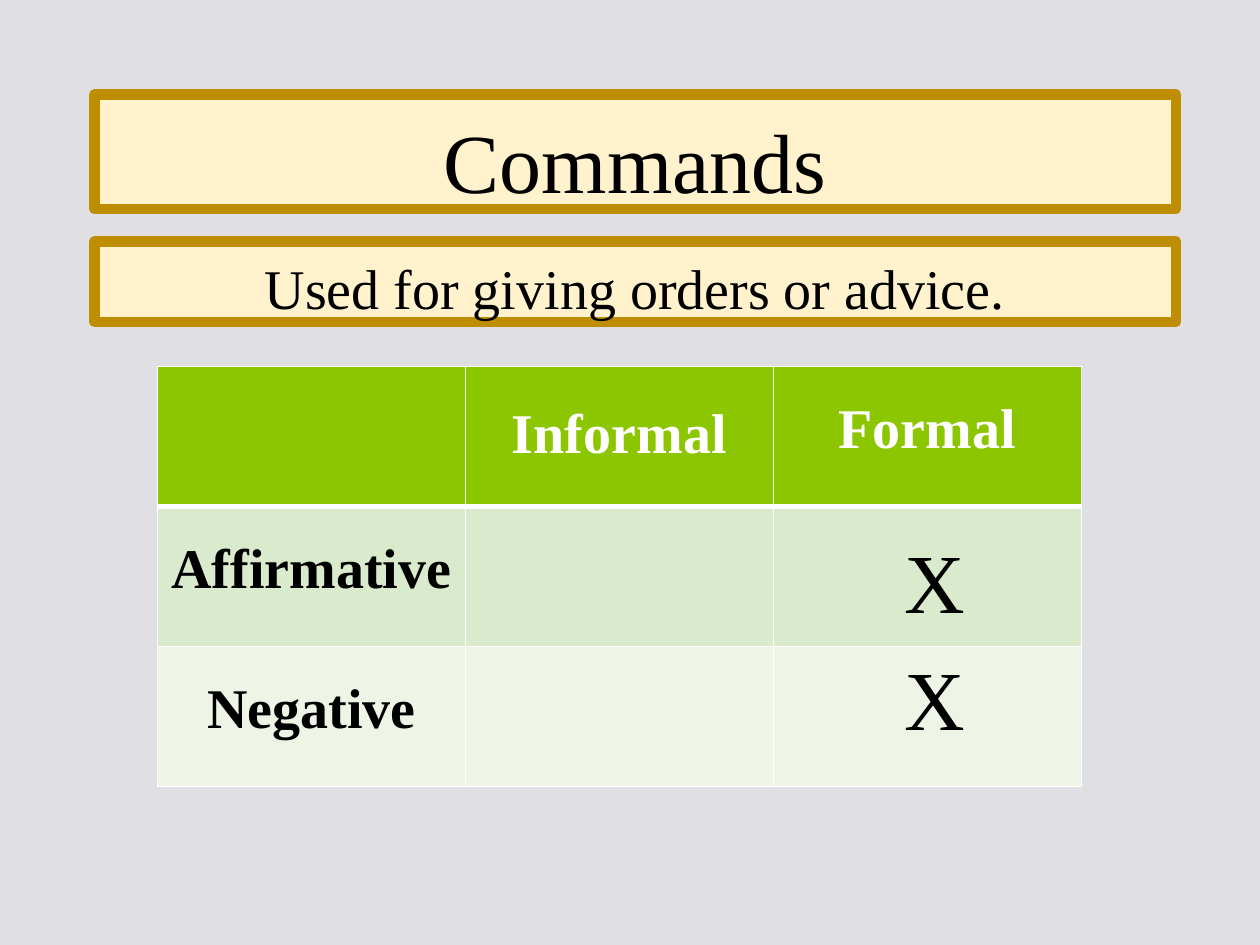
from pptx import Presentation
from pptx.dml.color import RGBColor
from pptx.enum.shapes import MSO_SHAPE
from pptx.enum.text import MSO_ANCHOR, MSO_AUTO_SIZE, PP_ALIGN
from pptx.oxml.ns import qn
from pptx.util import Pt
from lxml.etree import SubElement

COLORS = {
    "background": "DFDFE4",
    "cream": "FFF2CC",
    "gold": "BF8E00",
    "green": "8CC600",
    "light green": "DAEACC",
    "pale green": "EEF5E7",
    "black": "000000",
    "white": "FFFFFF",
}
INSET = 3.6


def color(name):
    return RGBColor.from_string(COLORS[name])


class SlideBuilder:
    font = "Times New Roman"

    def __init__(self, slide):
        self.slide = slide
        fill = slide.background.fill
        fill.solid()
        fill.fore_color.rgb = color("background")

    def set_text(self, frame, text, size, ink="black", bold=False):
        frame.text = text
        paragraph = frame.paragraphs[0]
        paragraph.alignment = PP_ALIGN.CENTER
        font = paragraph.font
        font.name, font.size, font.bold = self.font, Pt(size), bold
        font.color.rgb = color(ink)

    def fill_frame(self, shape, text, size):
        frame = shape.text_frame
        frame.word_wrap = True
        frame.auto_size = MSO_AUTO_SIZE.NONE
        frame.vertical_anchor = MSO_ANCHOR.TOP
        frame.margin_top = Pt(INSET + size / 10)
        frame.margin_bottom = Pt(0)
        self.set_text(frame, text, size)

    def banner(self, shape, text, size):
        shape.fill.solid()
        shape.fill.fore_color.rgb = color("cream")
        shape.line.color.rgb = color("gold")
        shape.line.width = Pt(6)
        self.fill_frame(shape, text, size)

    def title(self, text, left, top, width, height, size):
        shape = self.slide.shapes.title
        shape.left, shape.top = Pt(left), Pt(top)
        shape.width, shape.height = Pt(width), Pt(height)
        self.banner(shape, text, size)

    def box(self, text, left, top, width, height, size):
        shape = self.slide.shapes.add_shape(
            MSO_SHAPE.RECTANGLE, Pt(left), Pt(top), Pt(width), Pt(height))
        shape.shadow.inherit = False
        self.banner(shape, text, size)

    def label(self, text, left, top, width, height, size):
        shape = self.slide.shapes.add_textbox(Pt(left), Pt(top), Pt(width), Pt(height))
        self.fill_frame(shape, text, size)

    def borders(self, cell, top, bottom):
        properties = cell._tc.get_or_add_tcPr()
        for side, width in (("L", 1), ("R", 1), ("T", top), ("B", bottom)):
            line = SubElement(properties, qn(f"a:ln{side}"), w=str(Pt(width)))
            solid = SubElement(line, qn("a:solidFill"))
            SubElement(solid, qn("a:srgbClr"), val=COLORS["white"])

    def table(self, rows, fills, left, top, column_width, row_height):
        columns = len(rows[0])
        table = self.slide.shapes.add_table(
            len(rows), columns, Pt(left), Pt(top),
            Pt(column_width * columns), Pt(row_height * len(rows))).table
        for row_index, (row, fill) in enumerate(zip(rows, fills)):
            header = row_index == 0
            for column_index, (text, margin) in enumerate(row):
                cell = table.cell(row_index, column_index)
                self.borders(cell, 3 if row_index == 1 else 1, 3 if header else 1)
                cell.fill.solid()
                cell.fill.fore_color.rgb = color(fill)
                cell.margin_left = cell.margin_right = Pt(INSET)
                cell.margin_top = Pt(margin)
                if text:
                    self.set_text(cell.text_frame, text, 32,
                                  "white" if header else "black", True)


def main():
    presentation = Presentation()
    presentation.slide_width, presentation.slide_height = Pt(720), Pt(540)
    builder = SlideBuilder(presentation.slides.add_slide(presentation.slide_layouts[5]))
    builder.title("Commands", 54, 54, 618, 65.5, 48)
    empty = ("", INSET)
    rows = [
        [empty, ("Informal", 20.8), ("Formal", 18.4)],
        [("Affirmative", 18.4), empty, empty],
        [("Negative", 18.4), empty, empty],
    ]
    builder.table(rows, ["green", "light green", "pale green"], 90, 209.5, 176, 80)
    for top in (294, 361):
        builder.label("X", 498, top, 72, 65.5, 48)
    builder.box("Used for giving orders or advice.", 54, 138, 618, 46, 32)
    presentation.save("out.pptx")


if __name__ == "__main__":
    main()
